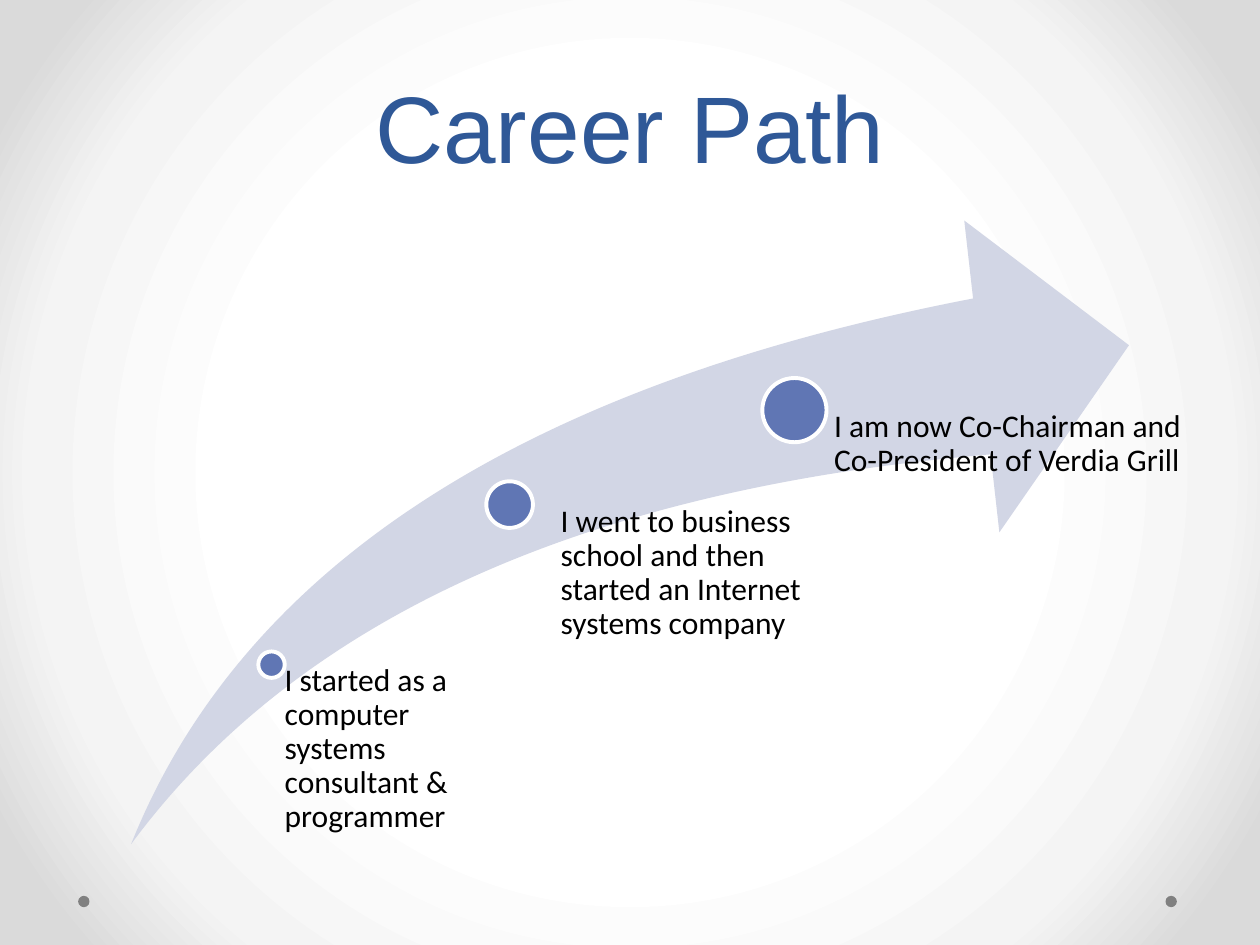
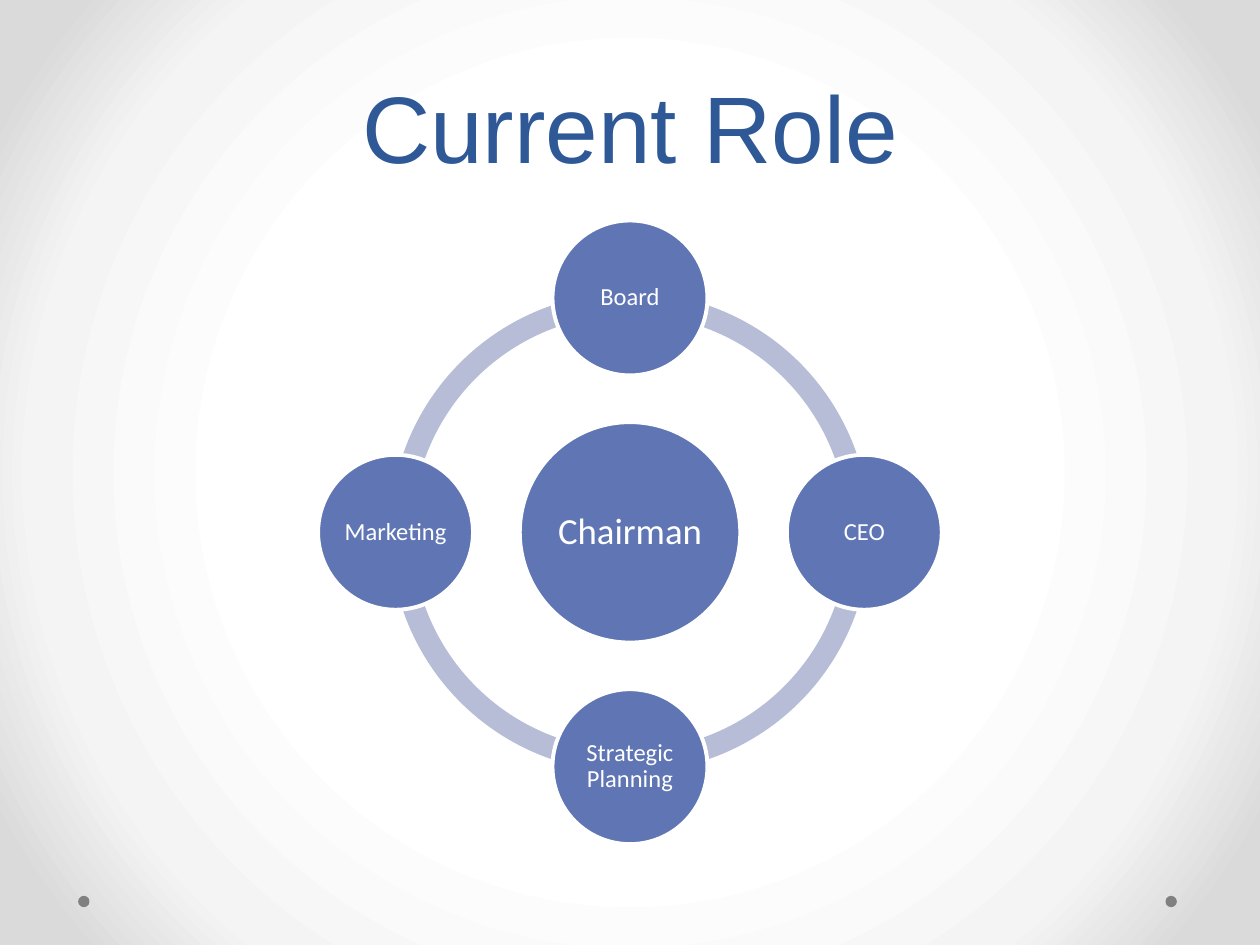
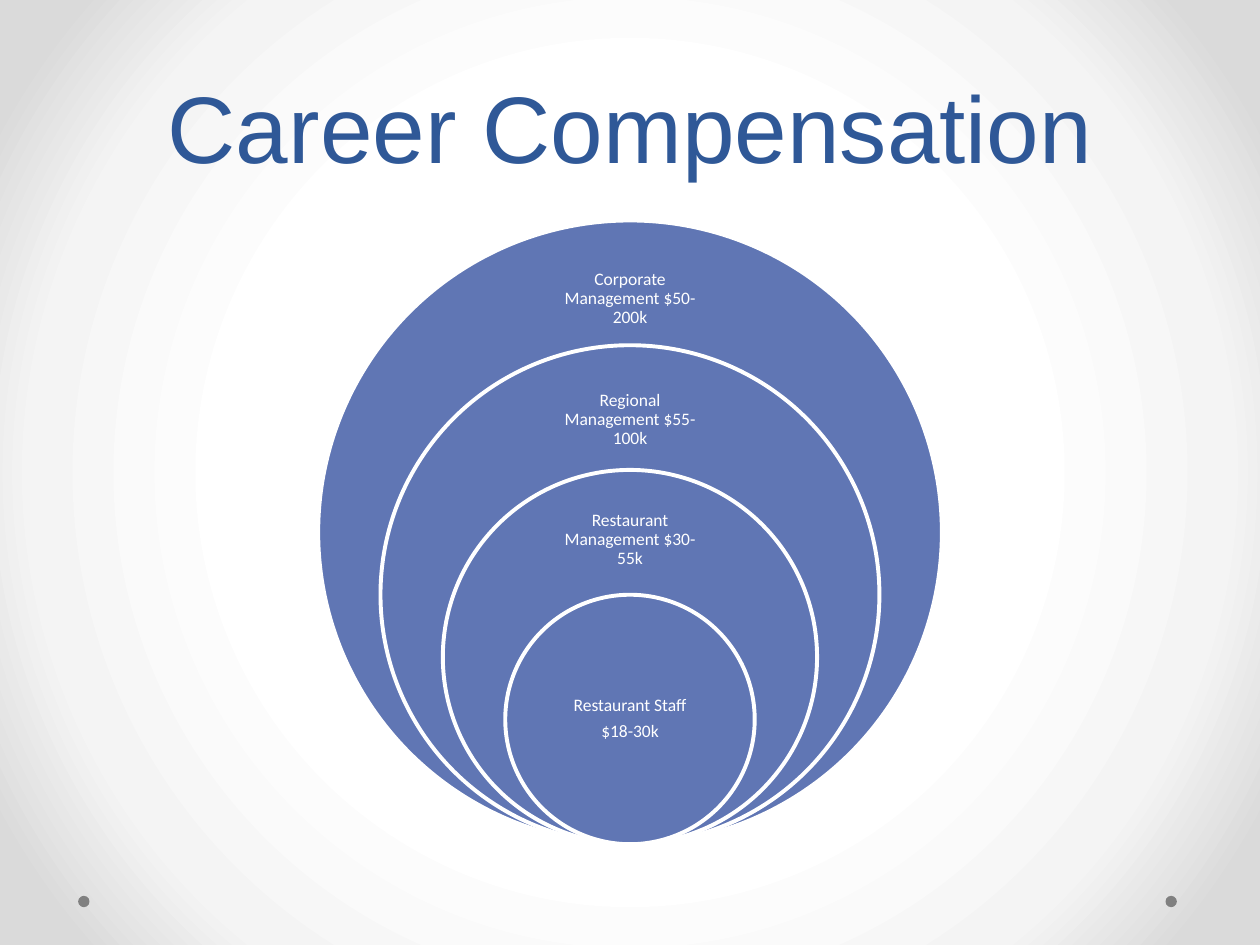
import math

import pptx
import pptx.dml.color
import pptx.enum.shapes
import pptx.enum.text
import pptx.oxml
import pptx.oxml.ns
import pptx.util

Inches, Pt = pptx.util.Inches, pptx.util.Pt
MSO_SHAPE = pptx.enum.shapes.MSO_SHAPE
PP_ALIGN = pptx.enum.text.PP_ALIGN
MSO_ANCHOR = pptx.enum.text.MSO_ANCHOR

# Content
COLORS = {
    "title": "2F5897", "circle": "6076B4", "swoosh": "D2D6E5", "ring": "B7BDD6",
    "dot": "808080", "white": "FFFFFF", "black": "000000",
}
BACKGROUND_STOPS = [(50, "FFFFFF"), (76, "F4F4F4"), (92, "DADADA")]
DOT_LEFTS = [0.62, 9.25]

# Text, marker (left, top, diameter), text box (left, top, width), left inset
CAREER_STEPS = [
    ("I started as a computer systems consultant & programmer",
     (2.05, 5.17, 0.21), (2.15, 5.27, 1.85), 0.11),
    ("I went to business school and then started an Internet systems company",
     (3.86, 3.82, 0.37), (4.25, 4.01, 2.17), 0.2),
    ("I am now Co-Chairman and Co-President of Verdia Grill",
     (6.05, 3, 0.51), (6.35, 3.26, 3.15), 0.27),
]

# Clockwise from the top
CENTER_ROLE = "Chairman"
OUTER_ROLES = ["Board", "CEO", "Strategic Planning", "Marketing"]

# Lines, label top, label height; from the largest circle to the smallest
PAY_LEVELS = [
    (["Corporate Management $50-200k"], 2, 0.74),
    (["Regional Management $55-100k"], 2.98, 0.71),
    (["Restaurant Management $30-55k"], 3.95, 0.67),
    (["Restaurant Staff", "$18-30k"], 5.21, 0.99),
]

# Shared diagram area
CENTER_X, TOP, BOTTOM = 5, 1.75, 6.7
SIZE = BOTTOM - TOP
CENTER_Y = TOP + SIZE / 2


def rgb(name):
    return pptx.dml.color.RGBColor.from_string(COLORS[name])


def set_attrs(obj, values):
    for name, value in values.items():
        setattr(obj, name, value)


def write(sp, lines, size, color, inset, align=PP_ALIGN.CENTER,
          anchor=MSO_ANCHOR.MIDDLE):
    """Fill a shape with paragraphs; inset is left, top, right, bottom."""
    tf = sp.text_frame
    sides = ("margin_left", "margin_top", "margin_right", "margin_bottom")
    set_attrs(tf, {"word_wrap": True, "vertical_anchor": anchor})
    set_attrs(tf, {side: Inches(value) for side, value in zip(sides, inset)})
    for i, line in enumerate(lines):
        p = tf.add_paragraph() if i else tf.paragraphs[0]
        set_attrs(p, {"alignment": align, "line_spacing": 0.9,
                      "space_after": Pt(0.35 * size)})
        r = p.add_run()
        r.text = line
        set_attrs(r.font, {"name": "Calibri", "size": Pt(size)})
        r.font.color.rgb = rgb(color)


def add_text(slide, box, *args, **kwargs):
    sp = slide.shapes.add_textbox(*map(Inches, box))
    write(sp, *args, **kwargs)


def add_shape(slide, kind, box, fill, outlined=False, adjustments=()):
    sp = slide.shapes.add_shape(kind, *map(Inches, box))
    sp.shadow.inherit = False
    sp.fill.solid()
    sp.fill.fore_color.rgb = rgb(fill)
    if outlined:
        sp.line.color.rgb = rgb("white")
        sp.line.width = Pt(2.25)
    else:
        sp.line.fill.background()
    for i, value in enumerate(adjustments):
        sp.adjustments[i] = value
    return sp


def add_circle(slide, left, top, diameter):
    return add_shape(slide, MSO_SHAPE.OVAL, (left, top, diameter, diameter),
                     "circle", outlined=True)


def set_background(master):
    """Give the master a round gradient, light in the middle."""
    master.background.fill.gradient()
    grad = master.background.fill
    old = master.element.find(".//" + pptx.oxml.ns.qn("p:bgPr")).find(
        pptx.oxml.ns.qn("a:gradFill"))
    stops = "".join(
        f'<a:gs pos="{pos * 1000}"><a:srgbClr val="{color}"/></a:gs>'
        for pos, color in BACKGROUND_STOPS)
    new = pptx.oxml.parse_xml(
        f'<a:gradFill {pptx.oxml.ns.nsdecls("a")} rotWithShape="1">'
        f'<a:gsLst>{stops}</a:gsLst><a:path path="circle">'
        '<a:fillToRect l="50000" t="50000" r="50000" b="50000"/>'
        '</a:path></a:gradFill>')
    old.getparent().replace(old, new)


def add_slide(prs, title):
    slide = prs.slides.add_slide(prs.slide_layouts[5])
    sp = slide.shapes.title
    set_attrs(sp, {"left": Inches(0.5), "top": Inches(0.17),
                   "width": Inches(9), "height": Inches(1.33)})
    tf = sp.text_frame
    tf.text = title
    set_attrs(tf, {"vertical_anchor": MSO_ANCHOR.BOTTOM, "word_wrap": True,
                   "auto_size": pptx.enum.text.MSO_AUTO_SIZE.NONE})
    p = tf.paragraphs[0]
    set_attrs(p, {"alignment": PP_ALIGN.CENTER, "line_spacing": Pt(58)})
    font = p.runs[0].font
    set_attrs(font, {"name": "Arial", "size": Pt(54)})
    font.color.rgb = rgb("title")
    for left in DOT_LEFTS:
        add_shape(slide, MSO_SHAPE.OVAL, (left, 7.11, 0.09, 0.09), "dot")
    return slide


def build_career_path(prs):
    slide = add_slide(prs, "Career Path")
    add_shape(slide, MSO_SHAPE.SWOOSH_ARROW, (1.04, TOP, 7.92, SIZE), "swoosh",
              adjustments=(0.25, 0.25))
    for text, marker, (left, top, width), inset in CAREER_STEPS:
        add_circle(slide, *marker)
        add_text(slide, (left, top, width, BOTTOM - top), [text], 18, "black",
                 (inset, 0, 0, 0), align=PP_ALIGN.LEFT, anchor=MSO_ANCHOR.TOP)


def build_current_role(prs):
    slide = add_slide(prs, "Current Role")
    ring, hub, outer = 3.81, 1.75, 1.23
    orbit = (SIZE - outer) / 2

    # Ring of quarter arcs; a full turn is 216 adjustment units
    for quarter in (2, 1, 0, 3):
        add_shape(slide, MSO_SHAPE.BLOCK_ARC,
                  (CENTER_X - ring / 2, CENTER_Y - ring / 2, ring, ring), "ring",
                  adjustments=(quarter * 54, (quarter + 1) % 4 * 54, 0.046))

    # Hub, then the roles around it
    sp = add_circle(slide, CENTER_X - hub / 2, CENTER_Y - hub / 2, hub)
    write(sp, [CENTER_ROLE], 21, "white", [0.03] * 4)
    for i, role in enumerate(OUTER_ROLES):
        angle = math.tau * i / len(OUTER_ROLES)
        sp = add_circle(slide, CENTER_X + orbit * math.sin(angle) - outer / 2,
                        CENTER_Y - orbit * math.cos(angle) - outer / 2, outer)
        write(sp, [role], 14, "white", [0.01] * 4)


def build_compensation(prs):
    slide = add_slide(prs, "Career Compensation")
    label_width = 1.38
    for i, (lines, top, height) in enumerate(PAY_LEVELS):
        diameter = SIZE * (1 - 0.2 * i)
        add_circle(slide, CENTER_X - diameter / 2, BOTTOM - diameter, diameter)
        add_text(slide, (CENTER_X - label_width / 2, top, label_width, height),
                 lines, 10, "white", [0.08] * 4)


def main():
    prs = pptx.Presentation()
    prs.slide_width, prs.slide_height = Inches(10), Inches(7.5)
    set_background(prs.slide_master)
    build_career_path(prs)
    build_current_role(prs)
    build_compensation(prs)
    prs.save("out.pptx")


if __name__ == "__main__":
    main()
